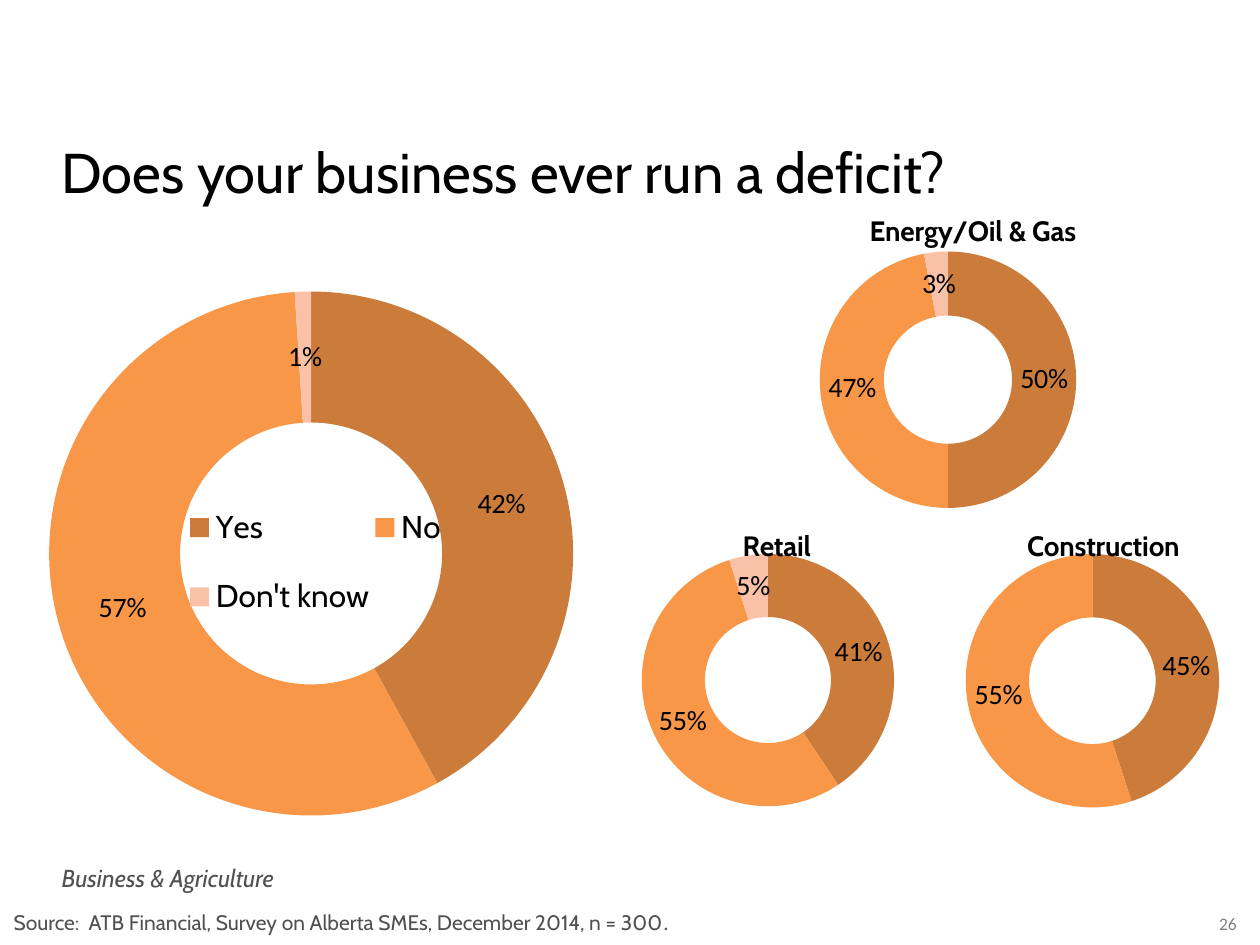
from lxml import etree
from pptx import Presentation
from pptx import util as u
from pptx.chart.data import CategoryChartData
from pptx.dml.color import RGBColor
from pptx.enum import chart as ch, text
from pptx.oxml.ns import qn

BLACK, GREY, PAGE_GREY = "000000", "505150", "808080"
ANSWER_COLORS = ["CB7B3A", "F89747", "F9C2A8"]

deck = Presentation()
deck.slide_width, deck.slide_height = u.Inches(10), u.Inches(7.5)
slide = deck.slides.add_slide(deck.slide_layouts[6])


def add_text(words, box, size, color=BLACK, font="Cabin", italic=False,
             align=text.PP_ALIGN.LEFT, anchor=text.MSO_ANCHOR.TOP):
    frame = slide.shapes.add_textbox(*map(u.Inches, box)).text_frame
    frame.word_wrap, frame.vertical_anchor = True, anchor
    line = frame.paragraphs[0]
    line.alignment = align
    run = line.add_run()
    run.text = words
    run.font.size, run.font.name, run.font.italic = u.Pt(size), font, italic
    run.font.color.rgb = RGBColor.from_string(color)
    return line


def place(part, inner=False, **shares):
    """Fix a chart part at shares (x, y, w, h) of the chart's size."""
    layout = part.find(qn("c:layout"))
    if layout is None:
        layout = etree.Element(qn("c:layout"))
        part.insert(0, layout)
    manual = etree.SubElement(layout, qn("c:manualLayout"))
    settings = [("layoutTarget", "inner")] if inner else []
    settings += [("xMode", "edge"), ("yMode", "edge"), *shares.items()]
    for tag, value in settings:
        etree.SubElement(manual, qn("c:" + tag)).set("val", str(value))


add_text("Does your business ever run a deficit?", (0.39, 0.96, 9.22, 0.79), 32,
         anchor=text.MSO_ANCHOR.MIDDLE)
add_text("Business & Agriculture", (0.39, 6.8, 2.81, 0.34), 14, GREY, italic=True)
source = add_text("Source:  ATB Financial, Survey on Alberta SMEs, December 2014, n = 300",
                  (0.01, 7.17, 9.31, 0.3), 12, GREY)
stop = source.add_run()
stop.text = "."
stop.font.size, stop.font.name = u.Pt(12), "Calibri"
stop.font.color.rgb = RGBColor.from_string(GREY)
add_text("26", (9.5, 7.2, 0.49, 0.27), 10, PAGE_GREY, "Calibri",
         align=text.PP_ALIGN.CENTER)

ANSWERS = ["Yes", "No", "Don't know"]
# sector, box in inches, shares of answers, left edge of the title
surveys = [
    (None, (0.39, 2.12, 4.27, 4.64), (0.42, 0.57, 0.01), None),
    ("Energy/Oil & Gas", (6.42, 1.59, 2.45, 2.7), (0.5, 0.47, 0.03), 0.18),
    ("Retail", (5.01, 4.09, 2.41, 2.48), (0.41, 0.55, 0.05), 0.35),
    ("Construction", (7.58, 4.09, 2.42, 2.49), (0.45, 0.55, 0), 0.22),
]
for sector, box, replies, title_left in surveys:
    data = CategoryChartData(number_format="0%")
    data.categories = ["1", "2", "3"] if sector else ANSWERS
    data.add_series("Series 1", replies)
    chart = slide.shapes.add_chart(ch.XL_CHART_TYPE.DOUGHNUT,
                                   *map(u.Inches, box), data).chart
    chart.font.size, chart.font.name = u.Pt(18), "Cabin"
    chart.font.color.rgb = RGBColor.from_string(BLACK)
    plot_area = chart._chartSpace.chart.plotArea

    chart.has_legend = not sector
    chart.has_title = bool(sector)
    if sector:
        chart.chart_title.text_frame.text = sector
        heading = chart.chart_title.text_frame.paragraphs[0].runs[0].font
        heading.size, heading.name, heading.bold = u.Pt(16), "Cabin", True
        heading.color.rgb = RGBColor.from_string(BLACK)
        place(chart.chart_title._element, x=title_left, y=0.02)
        place(plot_area, inner=True, x=0.035, y=0.055, w=0.831, h=0.945)
    else:
        chart.legend.position = ch.XL_LEGEND_POSITION.LEFT
        chart.legend.include_in_layout = True
        place(chart.legend._element, x=0.25, y=0.36, w=0.49, h=0.29)
        place(plot_area, inner=True, x=0, y=0, w=0.974, h=0.98)

    plot = chart.plots[0]
    plot.vary_by_categories = True
    ring = plot.series[0]
    for index, color in enumerate(ANSWER_COLORS):
        slice_fill = ring.points[index].format.fill
        slice_fill.solid()
        slice_fill.fore_color.rgb = RGBColor.from_string(color)
    labels = ring.data_labels
    labels.show_value = True
    labels.number_format, labels.number_format_is_linked = "0%;;", False  # hides zero
    labels.font.size, labels.font.name = u.Pt(16), "Calibri"
    labels.font.color.rgb = RGBColor.from_string(BLACK)

deck.save("out.pptx")
